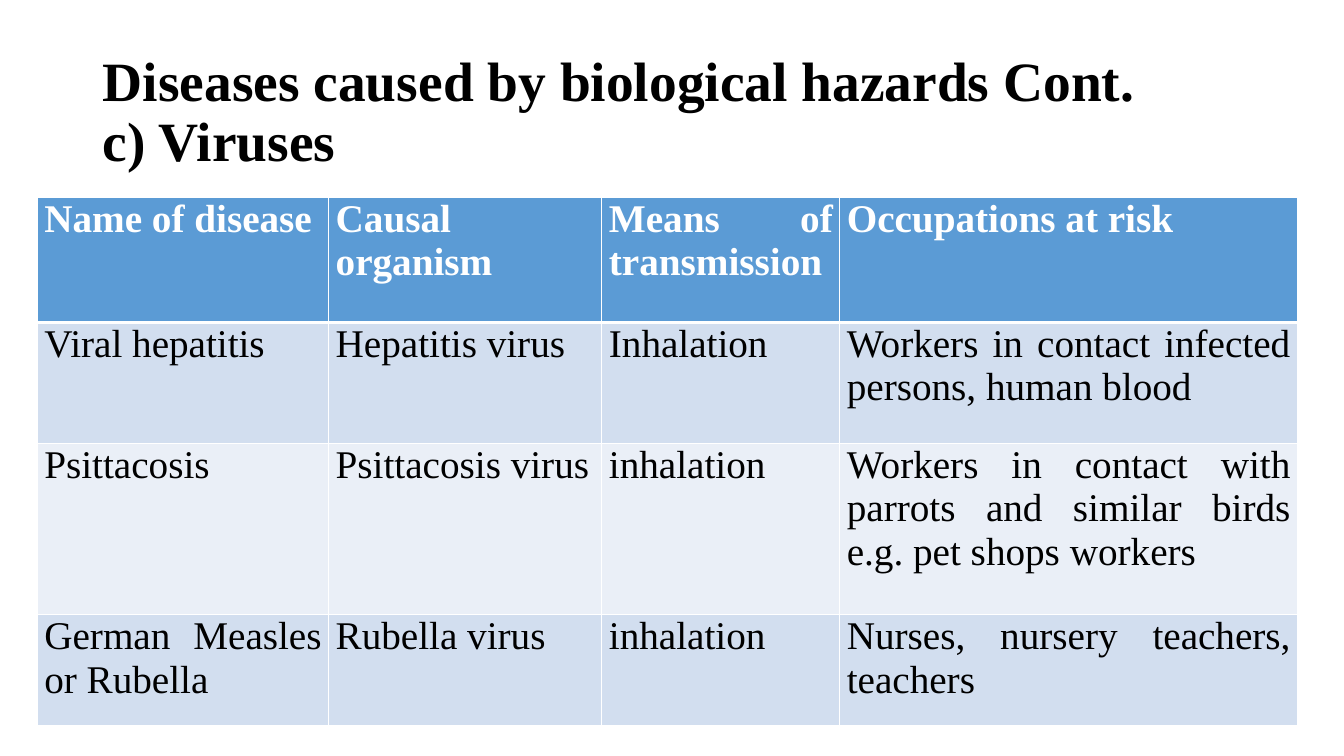
import pptx
import pptx.util
import pptx.dml.color
import pptx.enum.text
import pptx.oxml
import pptx.oxml.ns
from pptx.util import Inches

# Content
TITLE = "Diseases caused by biological hazards Cont.\vc) Viruses"
ROWS = [
    ("Name of disease", "Causal organism", "Means of transmission", "Occupations at risk"),
    ("Viral hepatitis", "Hepatitis virus", "Inhalation",
     "Workers in contact infected persons, human blood"),
    ("Psittacosis", "Psittacosis virus", "inhalation",
     "Workers in contact with parrots and similar birds e.g. pet shops workers"),
    ("German Measles or Rubella", "Rubella virus", "inhalation",
     "Nurses, nursery teachers, teachers"),
]
COL_WIDTHS = (2.89, 2.71, 2.36, 4.54)
ROW_HEIGHTS = (1.24, 1.2, 1.7, 1.1)

THEME = {
    "font": "Times New Roman",
    "title_size": 39.6,
    "cell_size": 28,
    "text": "000000",
    "header_text": "FFFFFF",
    "header_fill": "5B9BD5",
    "bands": ("D2DEEF", "EAEFF7"),
    "border": "FFFFFF",
}


def set_font(p, size, color, bold):
    p.font.name = THEME["font"]
    p.font.size = pptx.util.Pt(size)
    p.font.bold = bold
    p.font.color.rgb = pptx.dml.color.RGBColor.from_string(color)


def set_borders(cell, widths):
    tcPr = cell._tc.get_or_add_tcPr()
    for i, (side, width) in enumerate(widths.items()):
        tcPr.insert(i, pptx.oxml.parse_xml(
            f'<a:ln{side} {pptx.oxml.ns.nsdecls("a")} w="{pptx.util.Pt(width)}">'
            f'<a:solidFill><a:srgbClr val="{THEME["border"]}"/></a:solidFill></a:ln{side}>'))


prs = pptx.Presentation()
prs.slide_width, prs.slide_height = Inches(13.33), Inches(7.5)
s = prs.slides.add_slide(prs.slide_layouts.get_by_name("Title Only"))

# Title
title = s.shapes.title
title.left, title.top = Inches(0.92), Inches(0.4)
title.width, title.height = Inches(11.5), Inches(1.45)
tf = title.text_frame
tf.text = TITLE
tf.word_wrap = True
tf.auto_size = pptx.enum.text.MSO_AUTO_SIZE.NONE
tf.vertical_anchor = pptx.enum.text.MSO_ANCHOR.MIDDLE
p = tf.paragraphs[0]
p.alignment = pptx.enum.text.PP_ALIGN.LEFT
p.line_spacing = 0.9
set_font(p, THEME["title_size"], THEME["text"], True)

# Table
table = s.shapes.add_table(
    len(ROWS), len(COL_WIDTHS), Inches(0.37), Inches(1.96),
    Inches(sum(COL_WIDTHS)), Inches(sum(ROW_HEIGHTS))).table
for column, width in zip(table.columns, COL_WIDTHS):
    column.width = Inches(width)
for row, height in zip(table.rows, ROW_HEIGHTS):
    row.height = Inches(height)

for r, texts in enumerate(ROWS):
    header = r == 0
    fill = THEME["header_fill"] if header else THEME["bands"][(r - 1) % 2]
    color = THEME["header_text"] if header else THEME["text"]
    for c, text in enumerate(texts):
        cell = table.cell(r, c)
        cell.text = text
        cell.margin_left = cell.margin_right = Inches(0.07)
        cell.margin_top = cell.margin_bottom = 0
        cell.fill.solid()
        cell.fill.fore_color.rgb = pptx.dml.color.RGBColor.from_string(fill)
        set_borders(cell, {"L": 1, "R": 1, "T": 3 if r == 1 else 1, "B": 3 if header else 1})
        p = cell.text_frame.paragraphs[0]
        p.alignment = pptx.enum.text.PP_ALIGN.JUSTIFY
        set_font(p, THEME["cell_size"], color, header)

prs.save("out.pptx")
